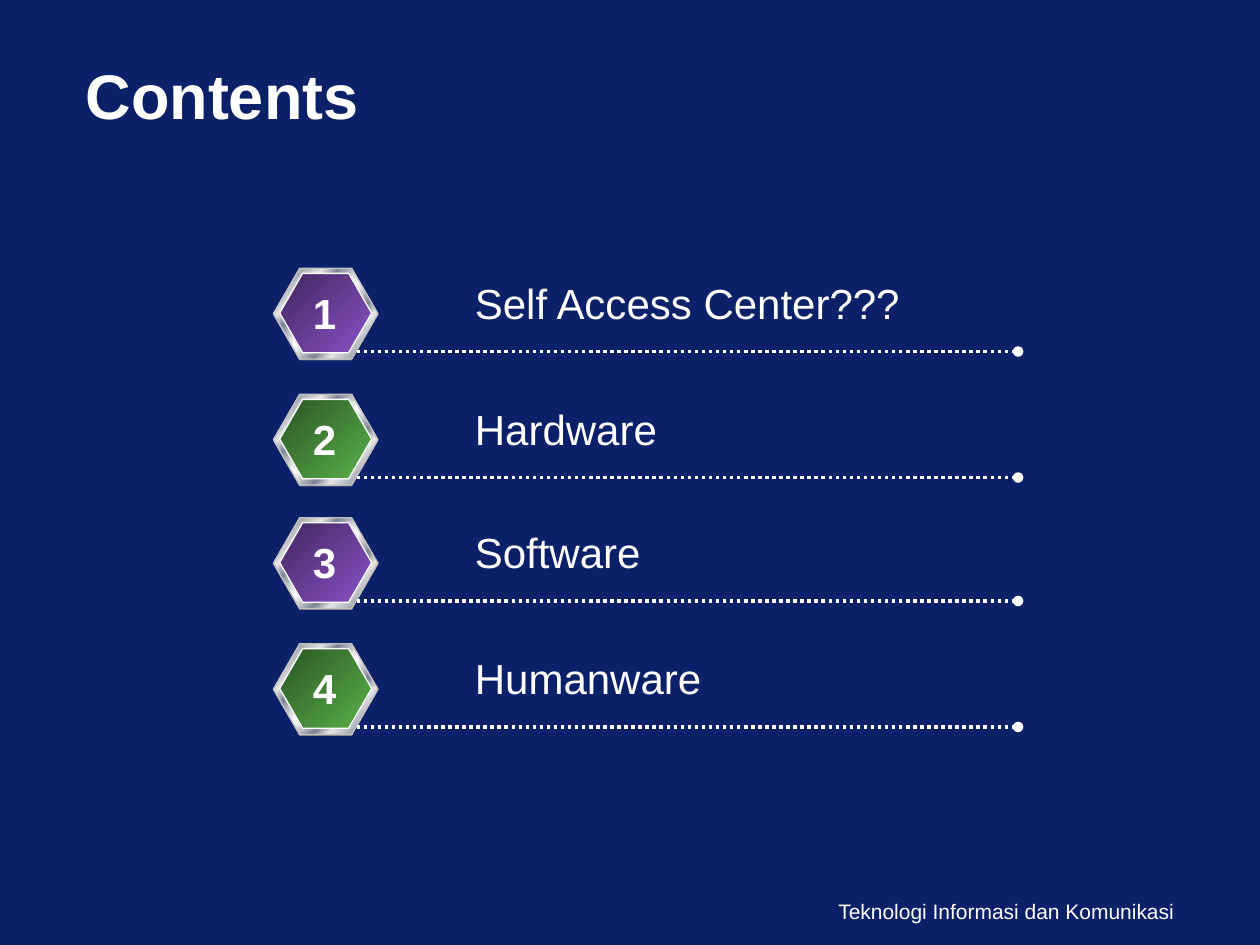
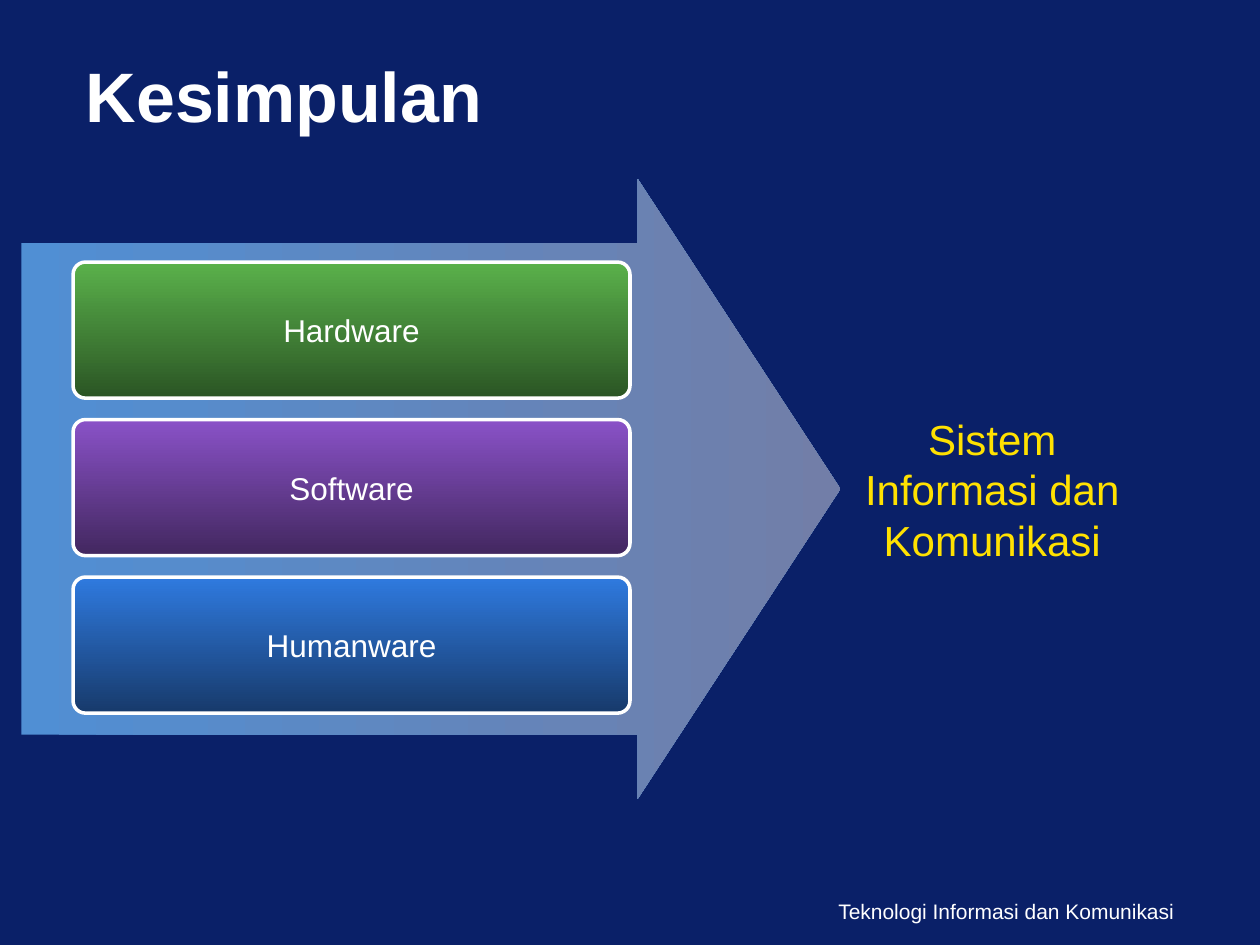
from dataclasses import dataclass

import pptx
import pptx.dml.color
import pptx.enum.dml
import pptx.enum.shapes
import pptx.enum.text
import pptx.oxml.ns
import pptx.util
from lxml import etree

Inches = pptx.util.Inches
Pt = pptx.util.Pt
qn = pptx.oxml.ns.qn
ALIGN = pptx.enum.text.PP_ALIGN
ANCHOR = pptx.enum.text.MSO_ANCHOR
SHAPE = pptx.enum.shapes.MSO_SHAPE


@dataclass(frozen=True)
class Theme:
    font: str = "Arial"
    background: str = "0A2068"
    white: str = "FFFFFF"
    result: str = "FFE101"
    badge_shade: str = "808080"
    badge_edge: str = "C0C0C0"
    green: tuple = ("2B5524", "5AB14B")
    purple: tuple = ("42275F", "8A52C8")
    blue: tuple = ("173A6B", "2F7ADF")
    arrow: tuple = ("508FD4", "727EA8")
    metal: tuple = (
        (0, "E6E6E6"), (7, "7D8496"), (26, "E6E6E6"), (34, "7D8496"),
        (46, "E6E6E6"), (50, "FFFFFF"), (54, "E6E6E6"), (66, "7D8496"),
        (74, "E6E6E6"), (93, "7D8496"), (100, "E6E6E6"),
    )
    footer_size: int = 12
    card_size: int = 18
    body_size: int = 24
    contents_title_size: int = 36
    conclusion_title_size: int = 40


THEME = Theme()
FOOTER = "Teknologi Informasi dan Komunikasi"
TOPICS = (
    ("Self Access Center???", 2.13, THEME.purple),
    ("Hardware", 3.13, THEME.green),
    ("Software", 4.11, THEME.purple),
    ("Humanware", 5.11, THEME.green),
)
COMPONENTS = (
    ("Hardware", THEME.green),
    ("Software", THEME.purple),
    ("Humanware", THEME.blue),
)


def rgb(color):
    return pptx.dml.color.RGBColor.from_string(color)


def box(left, top, width, height):
    return Inches(left), Inches(top), Inches(width), Inches(height)


def write(shape, text, size=THEME.body_size, color=THEME.white, bold=False,
          align=ALIGN.LEFT, anchor=ANCHOR.TOP, wrap=True, grow=False):
    frame = shape.text_frame
    auto = pptx.enum.text.MSO_AUTO_SIZE
    frame.auto_size = auto.SHAPE_TO_FIT_TEXT if grow else auto.NONE
    frame.word_wrap = wrap
    frame.vertical_anchor = anchor
    frame.text = text
    paragraph = frame.paragraphs[0]
    paragraph.alignment = align
    font = paragraph.runs[0].font
    font.name = THEME.font
    font.size = Pt(size)
    font.bold = bold
    font.color.rgb = rgb(color)


def add_label(slide, place, text, **style):
    write(slide.shapes.add_textbox(*box(*place)), text, **style)


def fill_gradient(shape, stops, angle):
    """Fill with (percent, colour) stops; the angle turns clockwise."""
    shape.fill.gradient()
    gradient = shape.element.spPr.find(qn("a:gradFill"))
    stop_list = gradient.find(qn("a:gsLst"))
    for old_stop in list(stop_list):
        stop_list.remove(old_stop)
    for percent, color in stops:
        stop = etree.SubElement(stop_list, qn("a:gs"), pos=str(percent * 1000))
        etree.SubElement(stop, qn("a:srgbClr"), val=color)
    gradient.find(qn("a:lin")).set("ang", str(angle * 60000))


def two_stops(colors):
    return tuple(zip((0, 100), colors))


def add_preset(shapes, preset, place, adjustments, fill=None, stops=None,
               angle=0, line=None, line_width=0.75):
    shape = shapes.add_shape(preset, *box(*place))
    shape.shadow.inherit = False
    for index, value in enumerate(adjustments):
        shape.adjustments[index] = value
    if stops:
        fill_gradient(shape, stops, angle)
    elif fill:
        shape.fill.solid()
        shape.fill.fore_color.rgb = rgb(fill)
    else:
        shape.fill.background()
    if line:
        shape.line.color.rgb = rgb(line)
        shape.line.width = Pt(line_width)
    else:
        shape.line.fill.background()
    return shape


def add_badge(slide, top, colors):
    """Stack a shade, a metal rim and a coloured face as one hexagon."""
    layers = slide.shapes.add_group_shape().shapes
    corner = (0.289,)
    add_preset(layers, SHAPE.HEXAGON, (2.17, top + 0.01, 0.83, 0.72), corner,
               fill=THEME.badge_shade)
    add_preset(layers, SHAPE.HEXAGON, (2.17, top, 0.83, 0.72), corner,
               stops=THEME.metal, angle=45, line=THEME.badge_edge)
    add_preset(layers, SHAPE.HEXAGON, (2.22, top + 0.04, 0.73, 0.63), corner,
               stops=two_stops(colors), angle=45, line=THEME.white)


def add_dotted_rule(slide, left, right, top):
    rule = slide.shapes.add_connector(
        pptx.enum.shapes.MSO_CONNECTOR.STRAIGHT,
        Inches(left), Inches(top), Inches(right), Inches(top))
    rule.line.color.rgb = rgb(THEME.white)
    rule.line.width = Pt(2)
    rule.line.dash_style = pptx.enum.dml.MSO_LINE.ROUND_DOT
    properties = rule.element.spPr
    etree.SubElement(properties.find(qn("a:ln")), qn("a:tailEnd"), type="oval")
    etree.SubElement(properties, qn("a:effectLst"))


def add_topic(slide, number, text, top, colors):
    add_badge(slide, top, colors)
    add_dotted_rule(slide, 2.83, 8.08, top + 0.66)
    add_label(slide, (3.67, top + 0.02, 3.61, 0.5), text, wrap=False, grow=True)
    add_label(slide, (2.38, top + 0.1, 0.39, 0.5), str(number), bold=True,
              align=ALIGN.CENTER, wrap=False, grow=True)


def add_titled_slide(deck, title, title_size):
    slide = deck.slides.add_slide(deck.slide_layouts.get_by_name("Title Only"))
    heading = slide.shapes.title
    heading.left, heading.top, heading.width, heading.height = box(0.58, 0.5, 8, 0.5)
    write(heading, title, size=title_size, bold=True, anchor=ANCHOR.MIDDLE)
    add_label(slide, (6.04, 7.08, 3.38, 0.27), FOOTER,
              size=THEME.footer_size, align=ALIGN.RIGHT)
    return slide


def build_contents(deck):
    slide = add_titled_slide(deck, "Contents", THEME.contents_title_size)
    for number, topic in enumerate(TOPICS, start=1):
        add_topic(slide, number, *topic)


def build_conclusion(deck):
    slide = add_titled_slide(deck, "Kesimpulan", THEME.conclusion_title_size)
    add_preset(slide.shapes, SHAPE.RIGHT_ARROW, (0.17, 1.42, 6.5, 4.92),
               (0.793, 0.327), stops=two_stops(THEME.arrow))
    corner = (0.091,)
    for row, (name, (dark, light)) in enumerate(COMPONENTS):
        card = add_preset(slide.shapes, SHAPE.ROUNDED_RECTANGLE,
                          (0.58, 2.08 + 1.25 * row, 4.42, 1.08), corner,
                          stops=two_stops((light, dark)), angle=90,
                          line=THEME.white, line_width=2)
        write(card, name, size=THEME.card_size, align=ALIGN.CENTER,
              anchor=ANCHOR.MIDDLE, wrap=False)
    result = add_preset(slide.shapes, SHAPE.ROUNDED_RECTANGLE,
                        (6.5, 3.17, 2.75, 1.42), corner)
    write(result, "Sistem Informasi dan Komunikasi", color=THEME.result,
          align=ALIGN.CENTER, anchor=ANCHOR.MIDDLE)


def main():
    deck = pptx.Presentation()
    deck.slide_width, deck.slide_height = Inches(10), Inches(7.5)
    backdrop = deck.slide_master.background.fill
    backdrop.solid()
    backdrop.fore_color.rgb = rgb(THEME.background)
    build_contents(deck)
    build_conclusion(deck)
    deck.save("out.pptx")


if __name__ == "__main__":
    main()
